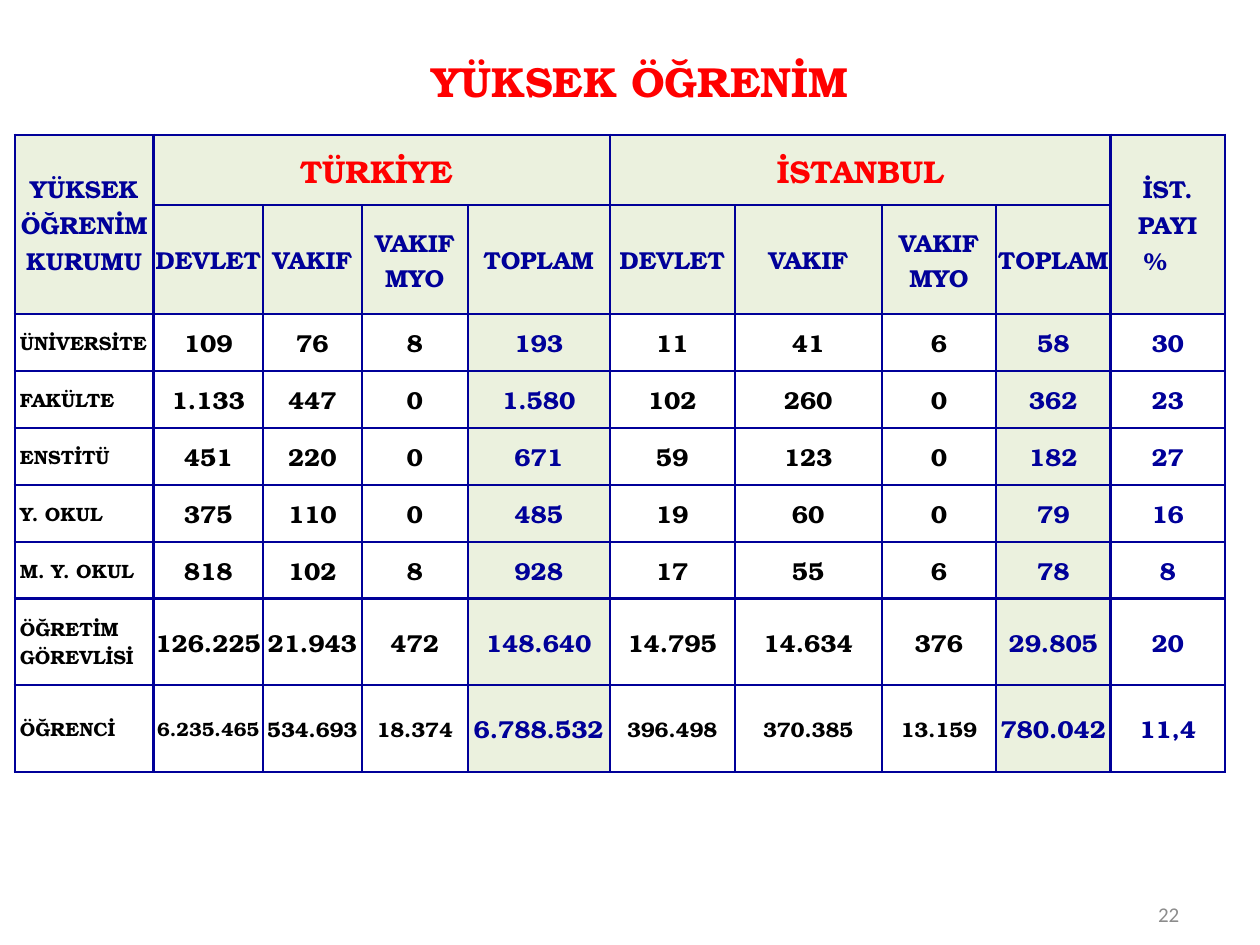
from lxml import etree
from pptx import Presentation
from pptx import util as u
from pptx.dml import color
from pptx.enum import text
from pptx.oxml import ns

COLORS = {
    "red": "FF0000",
    "navy": "000099",
    "black": "000000",
    "grey": "8C8C8C",
    "white": "FFFFFF",
    "green": "EBF1DE",
}
FONT = "TeX Gyre Bonum"
CENTER = text.PP_ALIGN.CENTER

COLUMN_WIDTHS = [79.4, 62.4, 56.6, 60.5, 81.2, 71.4, 84, 65.4, 65.4, 65.4]
ROW_HEIGHTS = [40.3, 62.1] + [32.55] * 5 + [49.5] * 2
TOTAL_COLUMNS = (4, 8)
SHARE_COLUMN = 9

GROUP_HEADINGS = ["DEVLET", "VAKIF", "VAKIF\nMYO", "TOPLAM"]
ROWS = [
    ["ÜNİVERSİTE", "109", "76", "8", "193", "11", "41", "6", "58", "30"],
    ["FAKÜLTE", "1.133", "447", "0", "1.580", "102", "260", "0", "362", "23"],
    ["ENSTİTÜ", "451", "220", "0", "671", "59", "123", "0", "182", "27"],
    ["Y. OKUL", "375", "110", "0", "485", "19", "60", "0", "79", "16"],
    ["M. Y. OKUL", "818", "102", "8", "928", "17", "55", "6", "78", "8"],
    ["ÖĞRETİM GÖREVLİSİ", "126.225", "21.943", "472", "148.640",
     "14.795", "14.634", "376", "29.805", "20"],
    ["ÖĞRENCİ", "6.235.465", "534.693", "18.374", "6.788.532",
     "396.498", "370.385", "13.159", "780.042", "11,4"],
]


def rgb(name):
    return color.RGBColor.from_string(COLORS[name])


def write(frame, content, size, color_name, align=CENTER, font=FONT, bold=True):
    """Fill a text frame, one paragraph for each line of the content."""
    frame.vertical_anchor = text.MSO_ANCHOR.MIDDLE
    for index, line in enumerate(content.split("\n")):
        paragraph = frame.add_paragraph() if index else frame.paragraphs[0]
        paragraph.alignment = align
        run = paragraph.add_run()
        run.text = line
        run.font.name = font
        run.font.size = u.Pt(size)
        run.font.bold = bold
        run.font.color.rgb = rgb(color_name)


def add_borders(cell):
    properties = cell._tc.get_or_add_tcPr()
    for side in ("lnL", "lnR", "lnT", "lnB"):
        line = etree.SubElement(properties, ns.qn("a:" + side), w=str(u.Pt(1.5)))
        fill = etree.SubElement(line, ns.qn("a:solidFill"))
        etree.SubElement(fill, ns.qn("a:srgbClr"), val=COLORS["navy"])


def format_cell(cell, fill_name, left=0):
    cell.margin_left = u.Pt(left)
    cell.margin_right = cell.margin_top = cell.margin_bottom = 0
    cell.vertical_anchor = text.MSO_ANCHOR.MIDDLE
    add_borders(cell)
    cell.fill.solid()
    cell.fill.fore_color.rgb = rgb(fill_name)


def write_cell(cell, content, size, color_name, align=CENTER):
    write(cell.text_frame, content, size, color_name, align)


def fill_headings(table):
    for row in range(2):
        for column in range(len(COLUMN_WIDTHS)):
            format_cell(table.cell(row, column), "green")

    # Side headings span both rows
    for column, label in ((0, "YÜKSEK ÖĞRENİM KURUMU"),
                          (SHARE_COLUMN, "İST. PAYI\n%")):
        cell = table.cell(0, column)
        cell.merge(table.cell(1, column))
        write_cell(cell, label, 14, "navy")
    # The percent sign sits a little left of centre
    percent = table.cell(0, SHARE_COLUMN).text_frame.paragraphs[1]
    percent._p.get_or_add_pPr().set("marR", str(u.Pt(14)))

    # Each region spans its four institution types
    for start, region in ((1, "TÜRKİYE "), (5, "İSTANBUL")):
        cell = table.cell(0, start)
        cell.merge(table.cell(0, start + 3))
        write_cell(cell, region, 18, "red")
        for offset, label in enumerate(GROUP_HEADINGS):
            write_cell(table.cell(1, start + offset), label, 14, "navy")


def number_size(row, column):
    """Student counts are long, so they are set smaller."""
    if row < len(ROWS) - 1 or column in TOTAL_COLUMNS + (SHARE_COLUMN,):
        return 14
    return 11 if column == 1 else 12


def fill_body(table):
    for row, values in enumerate(ROWS):
        for column, value in enumerate(values):
            cell = table.cell(row + 2, column)
            if column == 0:
                format_cell(cell, "white", left=3)
                write_cell(cell, value, 11, "black", text.PP_ALIGN.LEFT)
                continue
            total = column in TOTAL_COLUMNS
            format_cell(cell, "green" if total else "white")
            color_name = "navy" if total or column == SHARE_COLUMN else "black"
            write_cell(cell, value, number_size(row, column), color_name)


def add_education_table(slide):
    shape = slide.shapes.add_table(
        len(ROW_HEIGHTS), len(COLUMN_WIDTHS), u.Pt(8.4), u.Pt(77),
        u.Pt(sum(COLUMN_WIDTHS)), u.Pt(sum(ROW_HEIGHTS)))
    table = shape.table
    table.first_row = table.horz_banding = False
    for column, width in zip(table.columns, COLUMN_WIDTHS):
        column.width = u.Pt(width)
    for row, height in zip(table.rows, ROW_HEIGHTS):
        row.height = u.Pt(height)
    fill_headings(table)
    fill_body(table)


def add_title(slide):
    title = slide.shapes.title
    title.left, title.top = u.Pt(167), u.Pt(14.8)
    title.width, title.height = u.Pt(397), u.Pt(62.6)
    write(title.text_frame, "YÜKSEK ÖĞRENİM", 24, "red")


def add_page_number(slide):
    box = slide.shapes.add_textbox(u.Pt(592.5), u.Pt(519.4), u.Pt(88.5), u.Pt(6))
    box.text_frame.word_wrap = True
    write(box.text_frame, "22", 12, "grey", text.PP_ALIGN.RIGHT, "Calibri", False)


def main():
    presentation = Presentation()
    presentation.slide_width, presentation.slide_height = u.Pt(720), u.Pt(540)
    slide = presentation.slides.add_slide(presentation.slide_layouts[5])
    add_title(slide)
    add_page_number(slide)
    add_education_table(slide)
    presentation.save("out.pptx")


if __name__ == "__main__":
    main()
